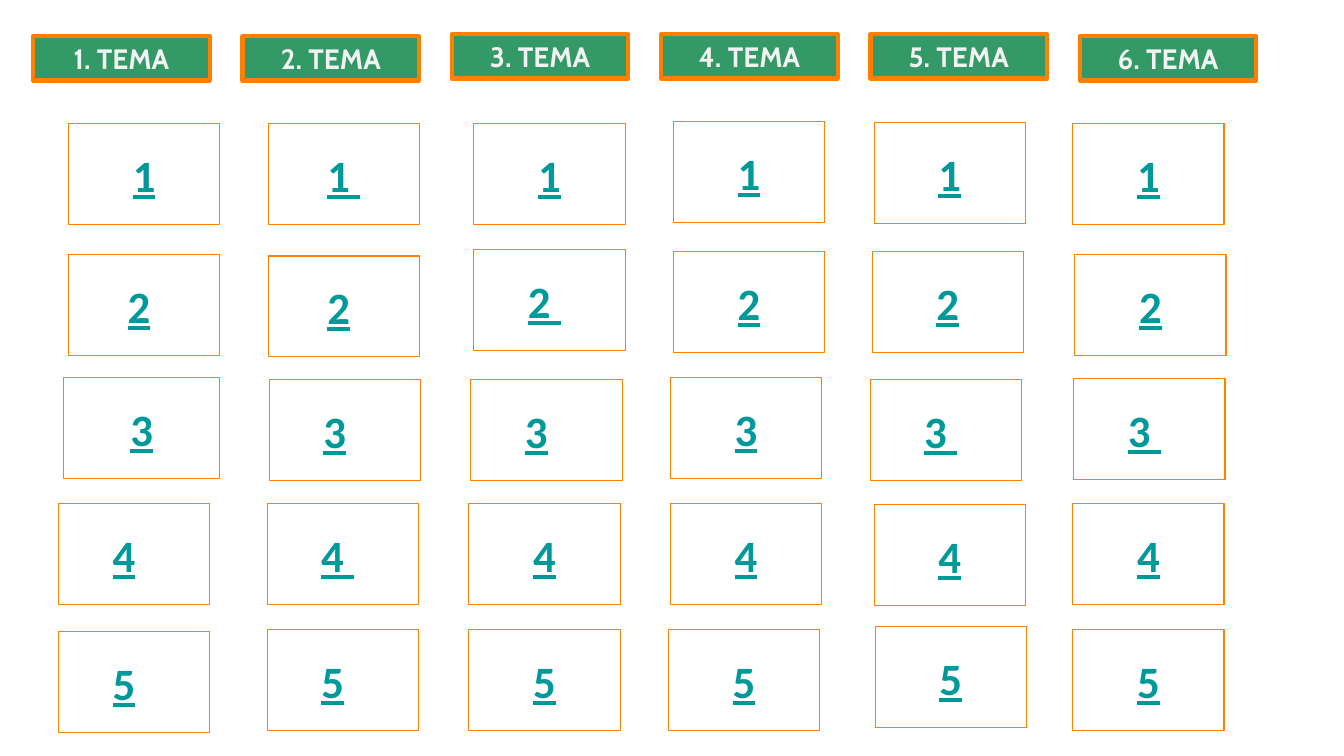
from pptx import Presentation
from pptx.dml.color import RGBColor
from pptx.enum.shapes import MSO_SHAPE
from pptx.enum.text import MSO_ANCHOR, PP_ALIGN
from pptx.util import Inches, Pt

RECT = MSO_SHAPE.RECTANGLE
BUTTON = MSO_SHAPE.ACTION_BUTTON_CUSTOM
MIDDLE = MSO_ANCHOR.MIDDLE
CENTER = PP_ALIGN.CENTER

WHITE = RGBColor(0xFF, 0xFF, 0xFF)
PALE = RGBColor(0xF2, 0xF2, 0xF2)
ORANGE = RGBColor(0xFF, 0x7F, 0x00)
GREEN = RGBColor(0x33, 0x99, 0x66)
TEAL = RGBColor(0x00, 0x99, 0x99)

THEMES = [
    ("1. TEMA", 0.36), ("2. TEMA", 0.36), ("3. TEMA", 0.34),
    ("4. TEMA", 0.34), ("5. TEMA", 0.34), ("6. TEMA", 0.36),
]
# label, left, top, right shift in spaces
ROWS = [
    [("1", 0.68, 1.23, 0), ("1 ", 2.66, 1.23, 0), ("1", 4.7, 1.23, 0),
     ("1", 6.68, 1.21, 0), ("1", 8.67, 1.22, 0), ("1", 10.64, 1.23, 0)],
    [("2", 0.68, 2.53, 1), ("2", 2.66, 2.54, 1), ("2 ", 4.7, 2.48, 1),
     ("2", 6.68, 2.5, 0), ("2", 8.65, 2.5, 0), ("2", 10.66, 2.53, 0)],
    [("3", 0.63, 3.75, 0), ("3", 2.67, 3.77, 2), ("3", 4.67, 3.77, 2),
     ("3", 6.65, 3.75, 0), ("3 ", 8.63, 3.77, 1), ("3 ", 10.65, 3.76, 1)],
    [("4", 0.58, 5, 2), ("4 ", 2.65, 5, 1), ("4", 4.65, 5, 0),
     ("4", 6.65, 5, 0), ("4", 8.67, 5.01, 0), ("4", 10.64, 5, 0)],
    [("5", 0.58, 6.27, 2), ("5", 2.65, 6.25, 2), ("5", 4.65, 6.25, 0),
     ("5", 6.63, 6.25, 0), ("5", 8.68, 6.22, 0), ("5", 10.64, 6.25, 0)],
]
WIDE = {("3", 0.63): 1.55}
SPACE = 0.1


def add_box(slide, kind, label, area, fill, edge, face, size, color):
    box = slide.shapes.add_shape(kind, *map(Inches, area))
    box.shadow.inherit = False
    box.fill.solid()
    box.fill.fore_color.rgb = fill
    box.line.color.rgb = ORANGE
    box.line.width = Pt(edge)
    frame = box.text_frame
    frame.vertical_anchor = MIDDLE
    para = frame.paragraphs[0]
    para.text = label
    para.alignment = CENTER
    font = para.font
    font.name, font.size, font.bold = face, Pt(size), True
    font.color.rgb = color
    return frame


def main():
    deck = Presentation()
    deck.slide_width, deck.slide_height = Inches(13.33), Inches(7.5)
    slide = deck.slides.add_slide(deck.slide_layouts[6])

    for col, (label, top) in enumerate(THEMES):
        area = (0.33 + col * 2.076, top, 1.75, 0.44)
        frame = add_box(slide, RECT, label, area, GREEN, 3, "Cabin", 20, PALE)
        frame.word_wrap = True

    for row in ROWS:
        for label, left, top, shift in row:
            area = (left, top, WIDE.get((label, left), 1.5), 1)
            frame = add_box(slide, BUTTON, label, area, WHITE, 0.75,
                            "Calibri", 32, TEAL)
            frame.word_wrap = False
            frame.margin_right = Inches(0.1 + shift * SPACE)
            frame.paragraphs[0].font.underline = True

    deck.save("out.pptx")


if __name__ == "__main__":
    main()
